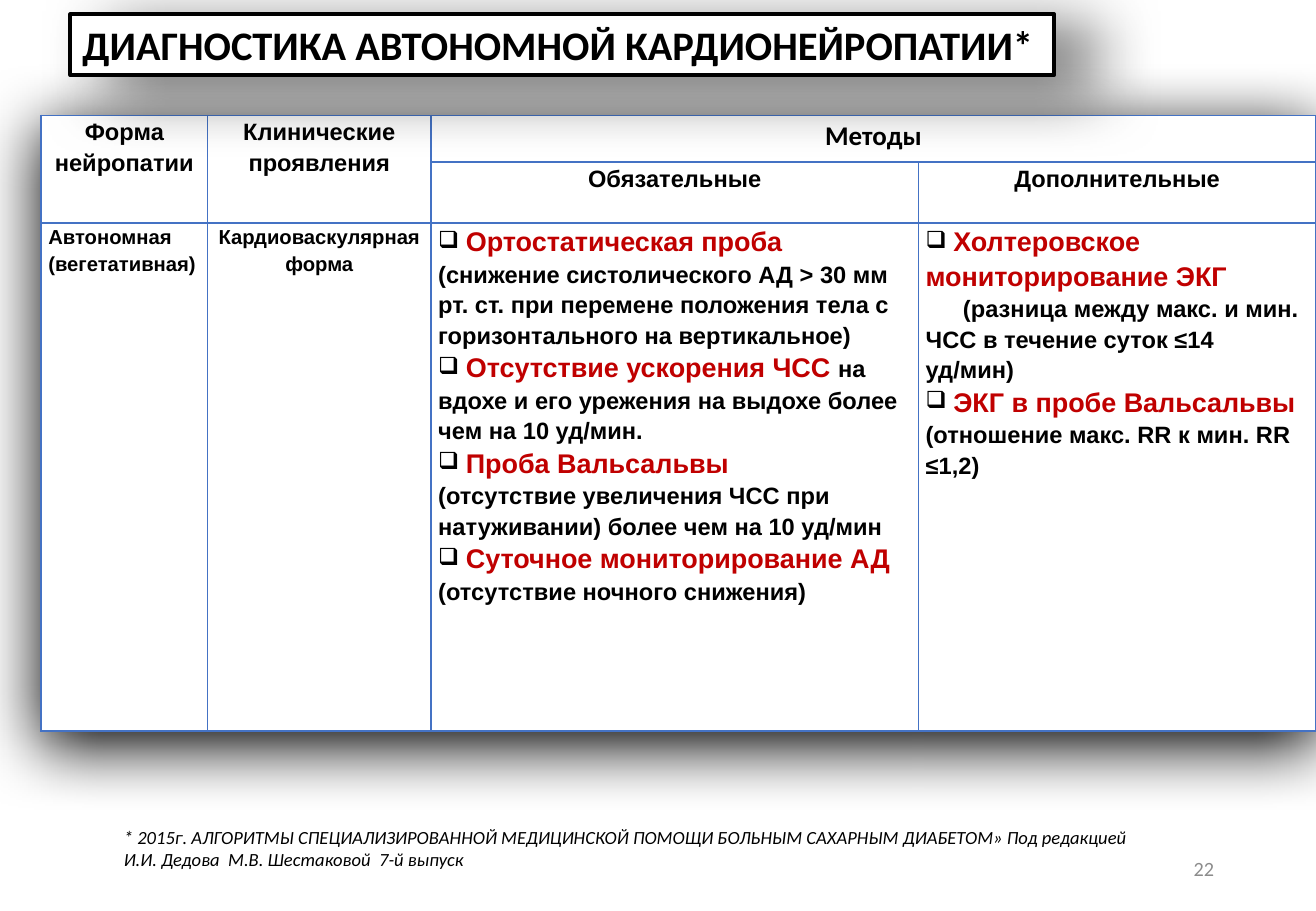
from lxml import etree
from pptx import Presentation
from pptx.dml.color import RGBColor
from pptx.enum import text
from pptx.oxml import parse_xml
from pptx.oxml.ns import nsdecls, qn
from pptx.util import Cm, Pt

COLORS = {"black": "000000", "white": "FFFFFF", "accent": "C00000",
          "border": "4472C4", "grey": "8C8C8C"}
LEFT, CENTER, RIGHT = text.PP_ALIGN.LEFT, text.PP_ALIGN.CENTER, text.PP_ALIGN.RIGHT

TITLE = "ДИАГНОСТИКА АВТОНОМНОЙ КАРДИОНЕЙРОПАТИИ*"
SOURCE = ("* 2015г. АЛГОРИТМЫ СПЕЦИАЛИЗИРОВАННОЙ МЕДИЦИНСКОЙ ПОМОЩИ БОЛЬНЫМ "
          "САХАРНЫМ ДИАБЕТОМ» Под редакцией И.И. Дедова  М.В. Шестаковой  7-й выпуск")
PAGE = "22"

# (row, column): lines, size, font, alignment
LABELS = {
    (0, 0): (["Форма", "нейропатии"], 14, "Arial", CENTER),
    (0, 1): (["Клинические", "проявления"], 14, "Arial", CENTER),
    (0, 2): (["Методы"], 16, "Calibri", CENTER),
    (1, 2): (["Обязательные"], 14, "Arial", CENTER),
    (1, 3): (["Дополнительные"], 14, "Arial", CENTER),
    (2, 0): (["Автономная", "(вегетативная)"], 12, "Arial", LEFT),
    (2, 1): (["Кардиоваскулярная форма"], 12, "Arial", CENTER),
}
# column: (method, explanation on the same line, explanation below, its indent in cm)
METHODS = {
    2: [("Ортостатическая проба", "",
         "(снижение систолического АД > 30 мм рт. ст. при перемене положения тела "
         "с горизонтального на вертикальное)", 0),
        ("Отсутствие ускорения ЧСС ",
         "на вдохе и его урежения на выдохе более чем на 10 уд/мин.", "", 0),
        ("Проба Вальсальвы", "",
         "(отсутствие увеличения ЧСС при натуживании) более чем на 10 уд/мин", 0),
        ("Суточное мониторирование АД ", "(отсутствие ночного снижения)", "", 0)],
    3: [("Холтеровское мониторирование ЭКГ", "",
         "(разница между макс. и мин. ЧСС в течение суток ≤14 уд/мин)", 0.78),
        ("ЭКГ в пробе Вальсальвы ", "(отношение макс. RR к мин. RR ≤1,2)", "", 0)],
}
COL_WIDTHS = [3.48, 4.67, 10.19, 8.31]
ROW_HEIGHTS = [0.98, 1.27, 10.62]


def rgb(name):
    return RGBColor.from_string(COLORS[name])


def add_run(p, words, size, font="Arial", color="black", bold=True, italic=False):
    r = p.add_run()
    r.text = words
    r.font.size, r.font.name = Pt(size), font
    r.font.bold, r.font.italic = bold, italic
    r.font.color.rgb = rgb(color)


def paragraphs(tf):
    """Yield the first paragraph of a frame, then new ones."""
    yield tf.paragraphs[0]
    while True:
        yield tf.add_paragraph()


def shadow(blur, dist, angle, alpha):
    return parse_xml(
        f'<a:effectLst {nsdecls("a")}><a:outerShdw blurRad="{Pt(blur)}" '
        f'dist="{Pt(dist)}" dir="{angle * 60000}" algn="ctr" rotWithShape="0">'
        f'<a:srgbClr val="{COLORS["black"]}"><a:alpha val="{alpha * 1000}"/>'
        '</a:srgbClr></a:outerShdw></a:effectLst>')


def style_cell(cell):
    cell.margin_left = cell.margin_right = Cm(0.15)
    cell.margin_top = cell.margin_bottom = 0
    tc_pr = cell._tc.get_or_add_tcPr()
    for side in ("lnL", "lnR", "lnT", "lnB"):
        tc_pr.append(parse_xml(
            f'<a:{side} {nsdecls("a")} w="{Pt(1)}"><a:solidFill>'
            f'<a:srgbClr val="{COLORS["border"]}"/></a:solidFill></a:{side}>'))
    cell.fill.solid()
    cell.fill.fore_color.rgb = rgb("white")


def set_indent(p, indent, bullet=None):
    p_pr = p._p.get_or_add_pPr()
    p_pr.set("marL", "0")
    p_pr.set("indent", str(Cm(indent)))
    if bullet:
        etree.SubElement(p_pr, qn("a:buChar"), char=bullet)


def fill_labels(table):
    for (row, col), (lines, size, font, align) in LABELS.items():
        for line, p in zip(lines, paragraphs(table.cell(row, col).text_frame)):
            p.alignment, p.line_spacing = align, 1.15
            add_run(p, line, size, font)


def fill_methods(table):
    for col, methods in METHODS.items():
        new_p = paragraphs(table.cell(2, col).text_frame)
        for method, inline, below, indent in methods:
            p = next(new_p)
            p.line_spacing = 1.15
            set_indent(p, 0, "❑")
            add_run(p, " ", 14)
            add_run(p, method, 16, color="accent")
            if inline:
                add_run(p, inline, 14)
            if below:
                p = next(new_p)
                p.line_spacing = 1.15
                set_indent(p, indent)
                add_run(p, below, 14)


def add_table(slide):
    frame = slide.shapes.add_table(
        len(ROW_HEIGHTS), len(COL_WIDTHS), Cm(0.86), Cm(2.41),
        Cm(sum(COL_WIDTHS)), Cm(sum(ROW_HEIGHTS)))
    table = frame.table
    table.first_row = table.horz_banding = False
    for column, width in zip(table.columns, COL_WIDTHS):
        column.width = Cm(width)
    for row, height in zip(table.rows, ROW_HEIGHTS):
        row.height = Cm(height)
    for cell in table.iter_cells():
        style_cell(cell)
    for start, end in (((0, 0), (1, 0)), ((0, 1), (1, 1)), ((0, 2), (0, 3))):
        table.cell(*start).merge(table.cell(*end))
    fill_labels(table)
    fill_methods(table)
    table._tbl.tblPr.insert(0, shadow(40, 8, 90, 100))


def place_title(slide):
    sp = slide.shapes.title
    sp.left, sp.top, sp.width, sp.height = Cm(1.47), Cm(0.3), Cm(20.57), Cm(1.27)
    sp.fill.solid()
    sp.fill.fore_color.rgb = rgb("white")
    sp.line.color.rgb, sp.line.width = rgb("black"), Pt(2.25)
    sp._element.spPr.append(shadow(40, 24, 19, 60))
    tf = sp.text_frame
    tf.word_wrap, tf.auto_size = True, text.MSO_AUTO_SIZE.NONE
    tf.vertical_anchor = text.MSO_ANCHOR.TOP
    p = tf.paragraphs[0]
    p.alignment = LEFT
    add_run(p, TITLE, 24, "Calibri")
    slide.shapes._spTree.append(sp._element)  # in front of the table's shadow


def add_note(slide, box, words, size, color, align, anchor, italic):
    tf = slide.shapes.add_textbox(*(Cm(v) for v in box)).text_frame
    tf.word_wrap, tf.vertical_anchor = True, anchor
    p = tf.paragraphs[0]
    p.alignment = align
    add_run(p, words, size, "Calibri", color, bold=False, italic=italic)


def main():
    prs = Presentation()
    prs.slide_width, prs.slide_height = Cm(27.51), Cm(19.05)
    slide = prs.slides.add_slide(prs.slide_layouts[5])
    add_table(slide)
    place_title(slide)
    add_note(slide, (2.34, 17.15, 22.05, 1.19), SOURCE, 11, "black", LEFT,
             text.MSO_ANCHOR.TOP, True)
    add_note(slide, (19.43, 17.65, 6.2, 1.02), PAGE, 12, "grey", RIGHT,
             text.MSO_ANCHOR.MIDDLE, False)
    prs.save("out.pptx")


if __name__ == "__main__":
    main()
